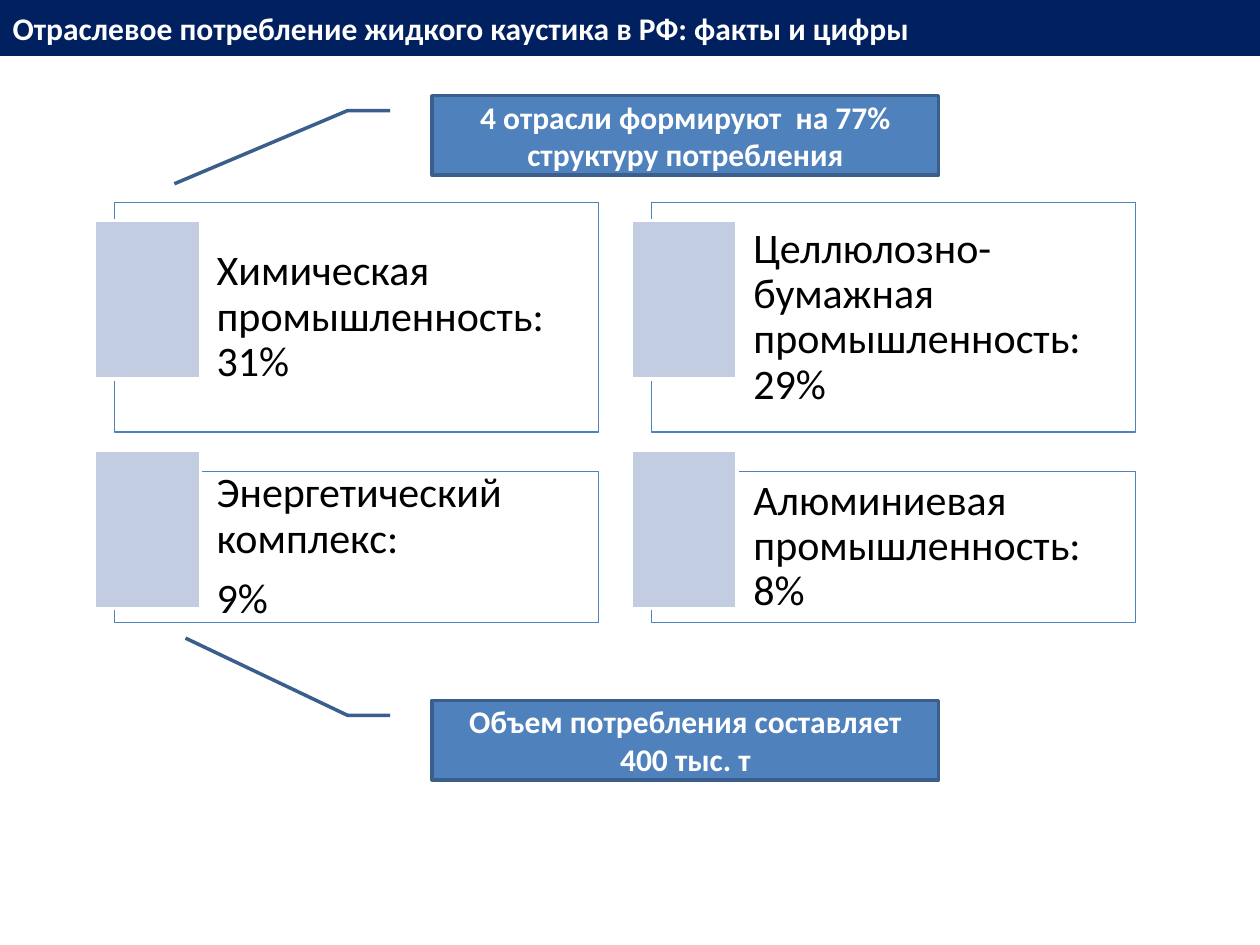
from lxml import etree
from pptx import Presentation
from pptx import util as u
from pptx.dml.color import RGBColor
from pptx.enum import shapes, text
from pptx.oxml.ns import qn

COLORS = {"navy": "002060", "blue": "4F81BD", "border": "3A5F8C",
          "pale": "C2CDE1", "white": "FFFFFF", "black": "000000"}
FONT = "Calibri"

# Card grid: two columns, two rows of (card top, card height, tile top)
COLUMNS = (0.91, 5.17)
ROWS = ((1.61, 1.82, 1.75), (3.74, 1.2, 3.57))
CARD_WIDTH = 3.84
TILE_OFFSET, TILE_WIDTH, TILE_HEIGHT = -0.16, 0.84, 1.26

INDUSTRIES = [
    [["Химическая промышленность: 31%"],
     ["Целлюлозно-бумажная промышленность: 29%"]],
    [["Энергетический комплекс:", "9%"],
     ["Алюминиевая промышленность: 8%"]],
]

# Callouts: top, end of the leader (share of height, share of width), lines
CALLOUTS = [
    (0.76, (1.11, -0.509), ["4 отрасли формируют  на 77% структуру потребления"]),
    (5.56, (-0.786, -0.487), ["Объем потребления составляет", "400 тыс. т"]),
]


def color(name):
    return RGBColor.from_string(COLORS[name])


def paint(sp, fill, line, width):
    sp.fill.solid()
    sp.fill.fore_color.rgb = color(fill)
    sp.line.color.rgb = color(line)
    sp.line.width = u.Pt(width)


def add_box(slide, kind, box, fill, line, width):
    sp = slide.shapes.add_shape(kind, *map(u.Inches, box))
    sp.shadow.inherit = False
    paint(sp, fill, line, width)
    return sp


def write(sp, lines, size, ink, align, bold=False):
    tf = sp.text_frame
    tf.word_wrap = True
    tf.auto_size = text.MSO_AUTO_SIZE.NONE
    tf.vertical_anchor = text.MSO_ANCHOR.MIDDLE
    tf.text = "\n".join(lines)
    for p in tf.paragraphs:
        p.alignment = align
        p.font.name, p.font.size, p.font.bold = FONT, u.Pt(size), bold
        p.font.color.rgb = color(ink)
    return tf


def set_alpha(sp, percent):
    fill = sp.fill.fore_color and sp._element.spPr.find(qn("a:solidFill"))
    etree.SubElement(fill[0], qn("a:alpha"), val=str(percent * 1000))


def add_title(slide, title):
    sp = slide.shapes.title
    sp.left, sp.top, sp.width, sp.height = map(u.Inches, (0, 0, 10, 0.44))
    paint(sp, "navy", "navy", 0.75)
    write(sp, [title], 18, "white", text.PP_ALIGN.LEFT, bold=True)


def add_card(slide, left, row, lines):
    top, height, tile_top = row
    card = add_box(slide, shapes.MSO_SHAPE.RECTANGLE,
                   (left, top, CARD_WIDTH, height), "white", "blue", 0.75)
    set_alpha(card, 40)
    tf = write(card, lines, 24, "black", text.PP_ALIGN.LEFT)
    tf.margin_left = u.Inches(0.81)
    tf.margin_top = tf.margin_right = tf.margin_bottom = u.Inches(0.1)
    for p in tf.paragraphs:
        p.line_spacing = 0.9
        p.space_after = u.Pt(8.4)
    add_box(slide, shapes.MSO_SHAPE.RECTANGLE,
            (left + TILE_OFFSET, tile_top, TILE_WIDTH, TILE_HEIGHT),
            "pale", "white", 2)


def add_callout(slide, top, leader_end, lines):
    sp = add_box(slide, shapes.MSO_SHAPE.LINE_CALLOUT_2,
                 (3.43, top, 4.02, 0.63), "blue", "border", 2)
    for i, value in enumerate((0.188, -0.083, 0.188, -0.167, *leader_end)):
        sp.adjustments[i] = value
    write(sp, lines, 18, "white", text.PP_ALIGN.CENTER, bold=True)


def main():
    prs = Presentation()
    prs.slide_width, prs.slide_height = u.Inches(10), u.Inches(7.5)
    slide = prs.slides.add_slide(prs.slide_layouts[5])

    # Title band
    add_title(slide, "Отраслевое потребление жидкого каустика в РФ: факты и цифры")

    # Industry cards
    for row, industries in zip(ROWS, INDUSTRIES):
        for left, lines in zip(COLUMNS, industries):
            add_card(slide, left, row, lines)

    # Summary callouts
    for top, leader_end, lines in CALLOUTS:
        add_callout(slide, top, leader_end, lines)

    prs.save("out.pptx")


if __name__ == "__main__":
    main()
